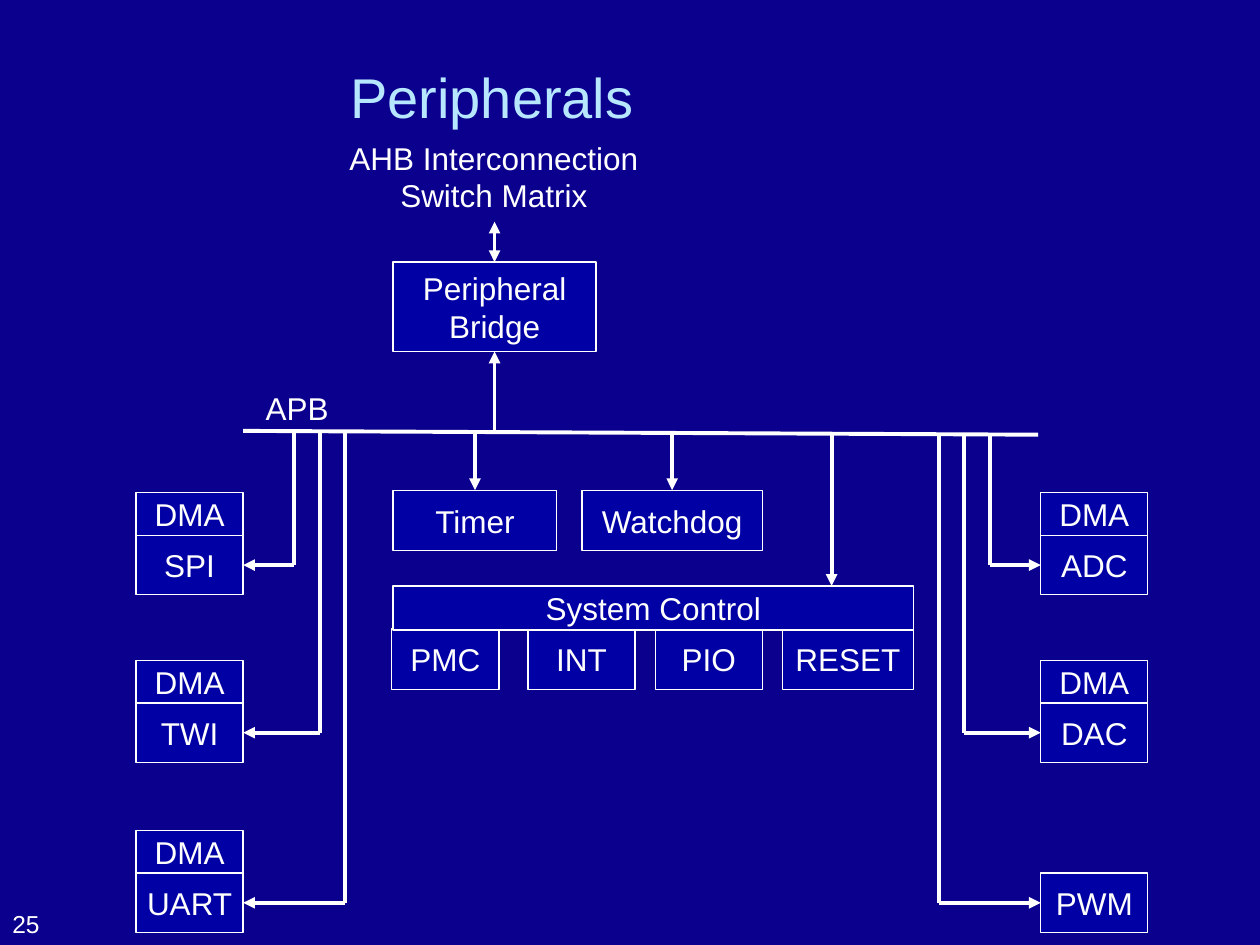
from dataclasses import dataclass

from lxml.etree import SubElement
from pptx import Presentation
from pptx.dml.color import RGBColor
from pptx.enum.shapes import MSO_CONNECTOR, MSO_SHAPE
from pptx.enum.text import MSO_ANCHOR, MSO_AUTO_SIZE, PP_ALIGN
from pptx.oxml.ns import qn
from pptx.util import Inches, Pt

TOP, LEFT, BOTTOM, RIGHT = range(4)


@dataclass(frozen=True)
class Theme:
    background: str = "0B008E"
    block: str = "0000A4"
    ink: str = "FFFFFF"
    heading: str = "B7E7FF"
    font: str = "Arial"
    title_size: float = 32
    label_size: float = 18
    number_size: float = 14
    outline: float = 0.75
    wire: float = 2.25


def color(value):
    return RGBColor.from_string(value)


def write(frame, text, *, font, size, ink, align=PP_ALIGN.LEFT,
          anchor=MSO_ANCHOR.TOP, grow=False):
    frame.word_wrap = True
    frame.auto_size = MSO_AUTO_SIZE.SHAPE_TO_FIT_TEXT if grow else MSO_AUTO_SIZE.NONE
    frame.vertical_anchor = anchor
    para = frame.paragraphs[0]
    para.alignment = align
    span = para.add_run()
    span.text = text
    span.font.name = font
    span.font.size = Pt(size)
    span.font.color.rgb = color(ink)


class Diagram:
    columns, rows = 100, 75

    def __init__(self, deck, theme):
        self.deck = deck
        self.theme = theme
        self.page = deck.slides.add_slide(deck.slide_layouts[5])
        fill = self.page.background.fill
        fill.solid()
        fill.fore_color.rgb = color(theme.background)

    def across(self, column):
        return round(self.deck.slide_width * column / self.columns)

    def down(self, row):
        return round(self.deck.slide_height * row / self.rows)

    def area(self, column, row, width, height):
        return (self.across(column), self.down(row),
                self.across(width), self.down(height))

    def text_format(self, **changes):
        return {"font": self.theme.font, "size": self.theme.label_size,
                "ink": self.theme.ink, **changes}

    def title(self, text, *place):
        box = self.page.shapes.title
        box.left, box.top, box.width, box.height = self.area(*place)
        write(box.text_frame, text, **self.text_format(
            size=self.theme.title_size, ink=self.theme.heading,
            anchor=MSO_ANCHOR.MIDDLE))

    def label(self, text, *place, **changes):
        box = self.page.shapes.add_textbox(*self.area(*place))
        write(box.text_frame, text, **self.text_format(**changes))

    def block(self, text, *place, tight=False):
        box = self.page.shapes.add_shape(MSO_SHAPE.RECTANGLE, *self.area(*place))
        box.shadow.inherit = False
        box.fill.solid()
        box.fill.fore_color.rgb = color(self.theme.block)
        box.line.color.rgb = color(self.theme.ink)
        box.line.width = Pt(self.theme.outline)
        if tight:
            box.text_frame.margin_left = box.text_frame.margin_right = 0
        write(box.text_frame, text, **self.text_format(
            align=PP_ALIGN.CENTER, anchor=MSO_ANCHOR.MIDDLE))
        return box

    def wire(self, start, end, heads=(), begin=None, finish=None):
        line = self.page.shapes.add_connector(
            MSO_CONNECTOR.STRAIGHT, self.across(start[0]), self.down(start[1]),
            self.across(end[0]), self.down(end[1]))
        line.line.color.rgb = color(self.theme.ink)
        line.line.width = Pt(self.theme.wire)
        properties = line._element.spPr
        for head in heads:
            SubElement(properties.find(qn("a:ln")), qn(f"a:{head}"), type="triangle")
        SubElement(properties, qn("a:effectLst"))
        if begin:
            line.begin_connect(*begin)
        if finish:
            line.end_connect(*finish)


def bus_row(column):
    return 34.2 + 0.3 * (column - 19.3) / 63.1


def draw_core(diagram):
    bridge = diagram.block("Peripheral Bridge", 31.2, 20.8, 16.1, 7.1)
    diagram.wire((82.4, bus_row(82.4)), (19.3, bus_row(19.3)))
    diagram.label("APB", 20.1, 30.4, 8.5, 4, grow=True)
    diagram.wire((39.25, 17.6), (39.25, 20.8), ("headEnd", "tailEnd"),
                 finish=(bridge, TOP))
    diagram.wire((39.25, 27.9), (39.25, bus_row(39.25)), ("headEnd",),
                 begin=(bridge, BOTTOM))

    for name, column, width in (("Timer", 31.2, 13), ("Watchdog", 46.2, 14.3)):
        box = diagram.block(name, column, 38.9, width, 4.8)
        middle = column + width / 2
        diagram.wire((middle, 38.9), (middle, bus_row(middle)), ("headEnd",),
                     begin=(box, TOP))

    for name, column, width in (("PMC", 31.1, 8.5), ("INT", 41.9, 8.5),
                                ("PIO", 52, 8.5), ("RESET", 62.1, 10.4)):
        diagram.block(name, column, 49.9, width, 4.8)
    diagram.block("System Control", 31.2, 46.5, 41.3, 3.5)
    diagram.wire((66, 46.5), (66, bus_row(66)), ("headEnd",))


def draw_ports(diagram):
    sides = (
        (10.8, 19.3, RIGHT, (("SPI", 23.3), ("TWI", 25.4), ("UART", 27.4))),
        (82.6, 82.6, LEFT, (("ADC", 78.6), ("DAC", 76.5), ("PWM", 74.5))),
    )
    width, dma_height, port_height = 8.5, 3.4, 4.7
    for column, edge, side, ports in sides:
        for (name, lane), row in zip(ports, (42.5, 55.8, 69.3)):
            if name != "PWM":
                diagram.block("DMA", column, row - dma_height, width, dma_height)
            port = diagram.block(name, column, row, width, port_height,
                                 tight=name == "UART")
            middle = row + port_height / 2
            diagram.wire((edge, middle), (lane, middle), ("headEnd",),
                         begin=(port, side))
            diagram.wire((lane, bus_row(lane)), (lane, middle))


def main():
    deck = Presentation()
    deck.slide_width, deck.slide_height = Inches(10), Inches(7.5)
    theme = Theme()
    diagram = Diagram(deck, theme)
    diagram.title("Peripherals", 26.8, 3.6, 73.2, 8)
    diagram.label("25", 0, 69.8, 10.6, 5.2, size=theme.number_size,
                  anchor=MSO_ANCHOR.BOTTOM)
    diagram.label("AHB Interconnection Switch Matrix", 24.4, 10.5, 29.6, 7.1,
                  align=PP_ALIGN.CENTER, grow=True)
    draw_core(diagram)
    draw_ports(diagram)
    deck.save("out.pptx")


if __name__ == "__main__":
    main()
